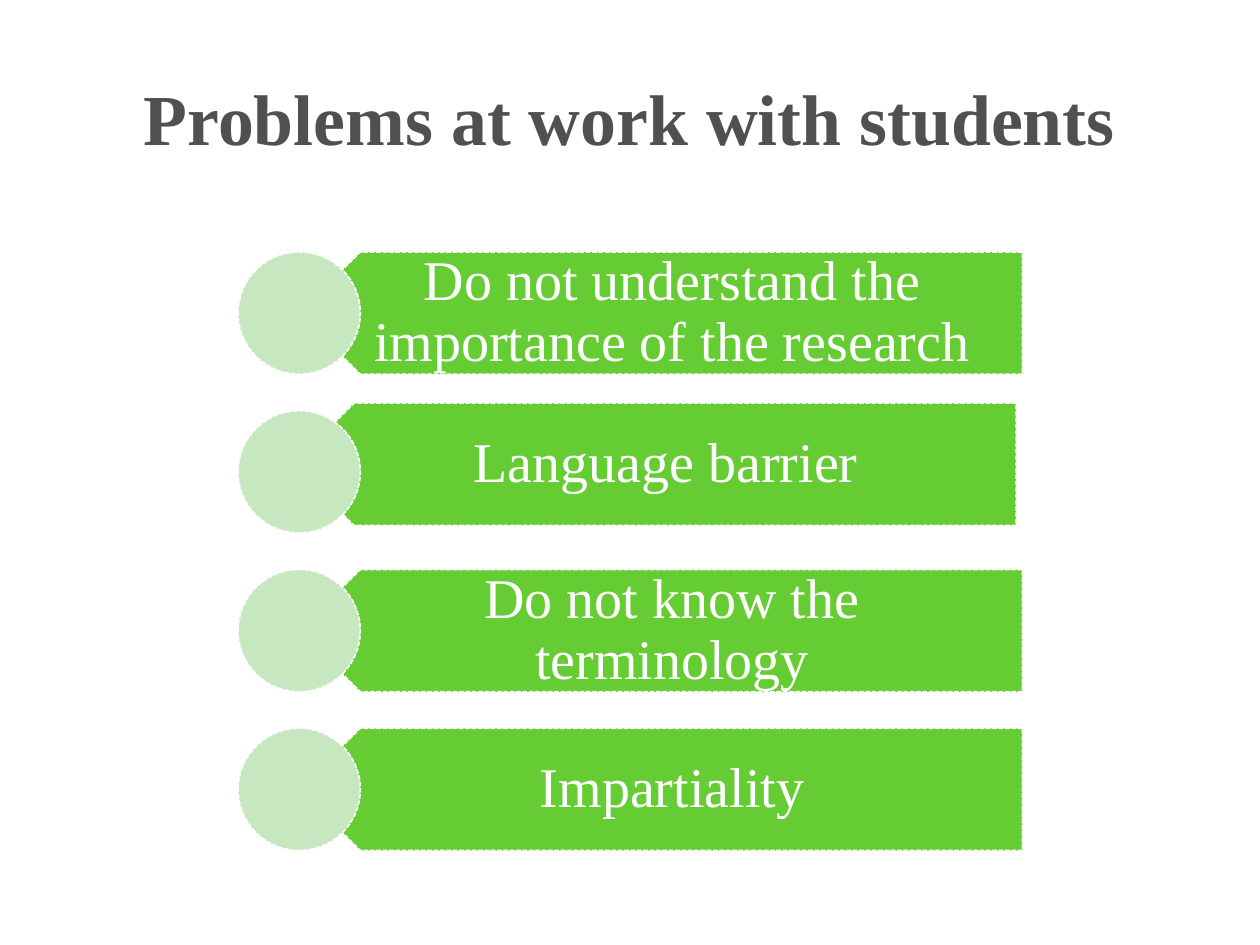
import pptx
import pptx.util
from pptx.dml.color import RGBColor
from pptx.enum.dml import MSO_LINE
from pptx.enum.shapes import MSO_SHAPE
from pptx.enum.text import MSO_ANCHOR, PP_ALIGN

Inches, Pt = pptx.util.Inches, pptx.util.Pt

# Content: label and the bar's shift (right, down) from its row
TITLE = "Problems at work with students"
PROBLEMS = [
    ("Do not understand the importance of the research", (0, 0)),
    ("Language barrier", (-0.05, -0.06)),
    ("Do not know the terminology", (0, 0)),
    ("Impartiality", (0, 0)),
]

# Look
FONT = "Times New Roman"
GREY = RGBColor(0x50, 0x50, 0x50)
GREEN = RGBColor(0x66, 0xCC, 0x33)
PALE_GREEN = RGBColor(0xC6, 0xE7, 0xBF)
WHITE = RGBColor(0xFF, 0xFF, 0xFF)

# Grid, in inches
FIRST_ROW, ROW_STEP, ROW_HEIGHT = 2, 1.26, 0.97
CIRCLE_LEFT = 1.89
BAR_LEFT, BAR_WIDTH = CIRCLE_LEFT + ROW_HEIGHT / 2, 5.74


def add_text(page, area, text, size, color, bold=False, margins=(0.1, 0.05, 0.1, 0.05)):
    box = page.shapes.add_textbox(*map(Inches, area))
    frame = box.text_frame
    frame.word_wrap = True
    frame.vertical_anchor = MSO_ANCHOR.MIDDLE
    (frame.margin_left, frame.margin_top,
     frame.margin_right, frame.margin_bottom) = map(Inches, margins)
    frame.text = text
    para = frame.paragraphs[0]
    para.alignment = PP_ALIGN.CENTER
    font = para.runs[0].font
    font.name, font.size, font.bold = FONT, Pt(size), bold
    font.color.rgb = color
    return para


def add_figure(page, kind, area, color):
    figure = page.shapes.add_shape(kind, *map(Inches, area))
    figure.shadow.inherit = False
    figure.fill.solid()
    figure.fill.fore_color.rgb = color
    figure.line.color.rgb = WHITE
    figure.line.width = Pt(0.9)
    figure.line.dash_style = MSO_LINE.SQUARE_DOT
    return figure


deck = pptx.Presentation()
deck.slide_width, deck.slide_height = Inches(10), Inches(7.5)
page = deck.slides.add_slide(deck.slide_layouts[6])

# Title
add_text(page, (0.5, 0.3, 9, 1.25), TITLE, 41, GREY, bold=True)

# One bar with its label and circle per problem
for row, (label, (shift_x, shift_y)) in enumerate(PROBLEMS):
    top = FIRST_ROW + row * ROW_STEP
    bar_area = (BAR_LEFT + shift_x, top + shift_y, BAR_WIDTH, ROW_HEIGHT)
    add_figure(page, MSO_SHAPE.PENTAGON, bar_area, GREEN).rotation = 180
    para = add_text(page, bar_area, label, 32, WHITE, margins=(0.43, 0.13, 0.25, 0.13))
    para.line_spacing = 0.9
    add_figure(page, MSO_SHAPE.OVAL, (CIRCLE_LEFT, top, ROW_HEIGHT, ROW_HEIGHT), PALE_GREEN)

deck.save("out.pptx")
